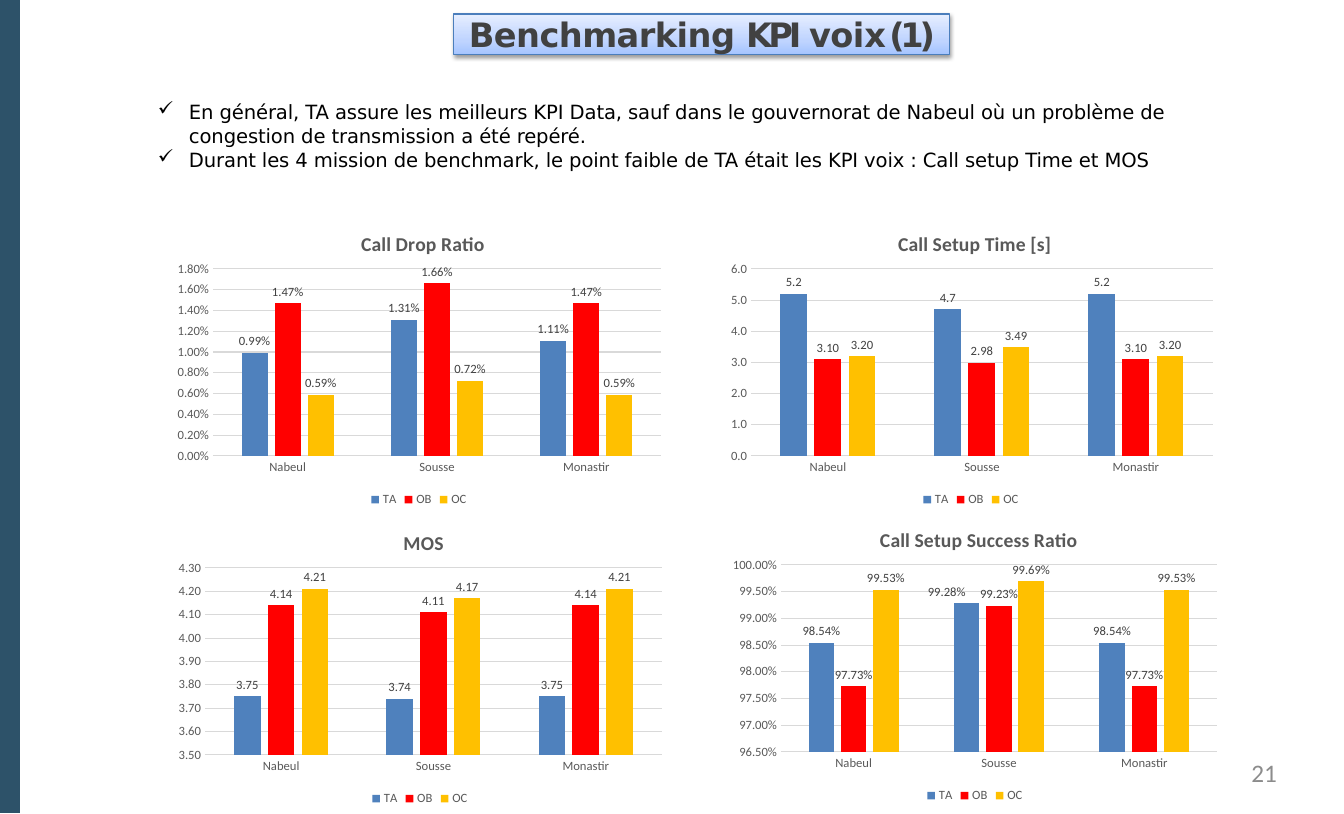
from pptx import Presentation
from pptx.chart.data import CategoryChartData
from pptx.dml.color import RGBColor
from pptx.enum.chart import XL_CHART_TYPE as ChartType, XL_LABEL_POSITION as LabelPos
from pptx.enum.chart import XL_LEGEND_POSITION as LegendPos, XL_TICK_MARK as Tick
from pptx.enum.shapes import MSO_SHAPE as Shape
from pptx.enum.text import MSO_ANCHOR as Anchor, PP_ALIGN as Align
from pptx.oxml import parse_xml
from pptx.oxml.ns import nsdecls, qn
from pptx.util import Pt

THEME = {
    "text_font": "DejaVu Sans", "chart_font": "Calibri",
    "bar": "2D5269", "title": "414141", "title_line": "4B7EBC",
    "title_stops": ((0, "A4C4FF"), (35, "BFD4FF"), (100, "E6EEFF")),
    "body": "000000", "page": "8C8C8C", "axis": "595959", "label": "404040",
    "grid": "D9D9D9", "operators": {"TA": "4F81BD", "OB": "FF0000", "OC": "FFC000"},
    "title_pt": 24, "body_pt": 14, "page_pt": 18, "chart_title_pt": 14, "axis_pt": 9,
}
CHART_W, CHART_H = 504, 302


def px(*lengths):
    return [round(n * 914400 / 100.8) for n in lengths]


def write(paragraph, text, font="text_font", color="body", size="body_pt",
          bold=False, align=None, spacing=None):
    run = paragraph.add_run()
    run.text = text
    run.font.name = THEME[font]
    run.font.size = Pt(THEME[size])
    run.font.bold = bold
    run.font.color.rgb = RGBColor.from_string(THEME[color])
    if align is not None:
        paragraph.alignment = align
    if spacing is not None:
        run.font._element.set("spc", str(round(spacing * 100)))


deck = Presentation()
deck.slide_width, deck.slide_height = px(1344, 814)
slide = deck.slides.add_slide(deck.slide_layouts[6])

# Side bar
side_bar = slide.shapes.add_shape(Shape.RECTANGLE, *px(0, 0, 20, 813))
side_bar.shadow.inherit = False
side_bar.fill.solid()
side_bar.fill.fore_color.rgb = RGBColor.from_string(THEME["bar"])
side_bar.line.fill.background()

# Title with gradient and soft shadow
heading = slide.shapes.add_shape(Shape.RECTANGLE, *px(454, 14, 496, 41))
heading.shadow.inherit = False
heading.line.color.rgb = RGBColor.from_string(THEME["title_line"])
heading.line.width = Pt(0.75)
stops = "".join(f'<a:gs pos="{pos * 1000}"><a:srgbClr val="{color}"/></a:gs>'
                for pos, color in THEME["title_stops"])
heading_props = heading._element.spPr
heading_props.find(qn("a:prstGeom")).addnext(parse_xml(
    f'<a:gradFill {nsdecls("a")} rotWithShape="1"><a:gsLst>{stops}</a:gsLst>'
    '<a:lin ang="16200000" scaled="0"/></a:gradFill>'))
heading_props.find(qn("a:effectLst")).append(parse_xml(
    f'<a:outerShdw {nsdecls("a")} blurRad="{Pt(3.1)}" dist="{Pt(1.6)}" dir="5400000" '
    'rotWithShape="0"><a:srgbClr val="000000"><a:alpha val="38000"/></a:srgbClr></a:outerShdw>'))
heading_text = heading.text_frame
heading_text.word_wrap = False
heading_text.vertical_anchor = Anchor.MIDDLE
heading_text.margin_left = heading_text.margin_right = 0
heading_text.margin_top = heading_text.margin_bottom = 0
for part, spacing in (("Benchmarking ", -0.4), ("KPI ", -2.8), ("voi", -0.5), ("x (1)", -3)):
    write(heading_text.paragraphs[0], part, color="title", size="title_pt",
          bold=True, align=Align.CENTER, spacing=spacing)

# Findings
findings = slide.shapes.add_textbox(*px(146, 95, 1084, 115)).text_frame
findings.word_wrap = True
indent, hanging = px(33, -31)
for number, finding in enumerate((
        "En général, TA assure les meilleurs KPI Data, sauf dans le gouvernorat de Nabeul "
        "où un problème de congestion de transmission a été repéré.",
        "Durant les 4 mission de benchmark, le point faible de TA était les KPI voix : "
        "Call setup Time et MOS")):
    paragraph = findings.add_paragraph() if number else findings.paragraphs[0]
    if number:
        paragraph.space_before = Pt(0.9)
    bullet = paragraph._p.get_or_add_pPr()
    bullet.set("marL", str(indent))
    bullet.set("indent", str(hanging))
    bullet.append(parse_xml(f'<a:buChar {nsdecls("a")} char="✓"/>'))
    write(paragraph, finding, spacing=-0.1)

# Charts: title, title width, left, top, plot inset, axis (min, max, step), formats, values
PERCENT, DECIMAL = "0.00%", "#,##0.00"
charts = (
    ("Call Drop Ratio", 123, 167, 209, 46, (0, 0.018, 0.002), PERCENT, PERCENT,
     ((0.0099, 0.0131, 0.0111), (0.0147, 0.0166, 0.0147), (0.0059, 0.0072, 0.0059))),
    ("MOS", 40, 168, 508, 37, (3.5, 4.3, 0.1), DECIMAL, DECIMAL,
     ((3.75, 3.74, 3.75), (4.14, 4.11, 4.14), (4.21, 4.17, 4.21))),
    ("Call Setup Time [s]", 153, 719, 209, 32, (0, 6, 1), "0.0", DECIMAL,
     ((5.2, 4.7, 5.2), (3.1, 2.98, 3.1), (3.2, 3.49, 3.2))),
    ("Call Setup Success Ratio", 197, 723, 505, 58, (0.965, 1, 0.005), PERCENT, PERCENT,
     ((0.9854, 0.9928, 0.9854), (0.9773, 0.9923, 0.9773), (0.9953, 0.9969, 0.9953))),
)
for (name, name_width, left, top, inset, (low, high, step),
     main_format, rival_format, values) in charts:
    formats = (main_format, rival_format, rival_format)
    data = CategoryChartData()
    data.categories = ("Nabeul", "Sousse", "Monastir")
    for operator, ratios, number_format in zip(THEME["operators"], values, formats):
        data.add_series(operator, ratios, number_format)
    chart = slide.shapes.add_chart(ChartType.COLUMN_CLUSTERED,
                                   *px(left, top, CHART_W, CHART_H), data).chart
    chart.font.name = THEME["chart_font"]
    chart.font.size = Pt(THEME["axis_pt"])
    chart.font.color.rgb = RGBColor.from_string(THEME["axis"])
    write(chart.chart_title.text_frame.paragraphs[0], name, font="chart_font",
          color="axis", size="chart_title_pt", bold=True)
    chart.has_legend = True
    chart.legend.position = LegendPos.BOTTOM
    chart.legend.include_in_layout = False

    # Axes
    cities, scale = chart.category_axis, chart.value_axis
    cities.major_tick_mark = scale.major_tick_mark = Tick.NONE
    scale.minimum_scale, scale.maximum_scale, scale.major_unit = low, high, step
    scale.tick_labels.number_format = main_format
    scale.tick_labels.number_format_is_linked = False
    scale.format.line.fill.background()
    for rule in (cities.format.line, scale.major_gridlines.format.line):
        rule.color.rgb = RGBColor.from_string(THEME["grid"])
        rule.width = Pt(0.75)

    # Columns and their labels
    plot = chart.plots[0]
    plot.gap_width, plot.overlap, plot.vary_by_categories = 219, -27, False
    for series, color, number_format in zip(plot.series, THEME["operators"].values(), formats):
        series.format.fill.solid()
        series.format.fill.fore_color.rgb = RGBColor.from_string(color)
        labels = series.data_labels
        labels.show_value = True
        labels.position = LabelPos.OUTSIDE_END
        labels.number_format = number_format
        labels.number_format_is_linked = False
        labels.font.size = Pt(THEME["axis_pt"])
        labels.font.color.rgb = RGBColor.from_string(THEME["label"])

    # Places inside the chart: parent, child index, target, mode, box in px
    title_xml = chart.chart_title._element
    places = [
        (title_xml, 1, "", "edge", {"x": (CHART_W - name_width) / 2, "y": 18}),
        (chart._chartSpace.chart.plotArea, 0, '<c:layoutTarget val="inner"/>', "edge",
         {"x": inset, "y": 60, "w": 494 - inset, "h": 187}),
    ]
    if name == "Call Setup Success Ratio":
        crowded = plot.series[0].points[1].data_label
        crowded.font.size = Pt(THEME["axis_pt"])
        crowded.font.color.rgb = RGBColor.from_string(THEME["label"])
        crowded.position = LabelPos.OUTSIDE_END
        crowded_xml = plot.series[0].data_labels._element.find(qn("c:dLbl"))
        places.append((crowded_xml, 1, "", "factor", {"x": -20, "y": 0}))
    for parent, index, target, mode, box in places:
        for former in parent.findall(qn("c:layout")):
            parent.remove(former)
        modes = "".join(f'<c:{axis}Mode val="{mode}"/>' for axis in "xy")
        sizes = "".join(f'<c:{key} val="{length / (CHART_W if key in "xw" else CHART_H):.4f}"/>'
                        for key, length in box.items())
        parent.insert(index, parse_xml(
            f'<c:layout {nsdecls("c")}><c:manualLayout>{target}{modes}{sizes}'
            '</c:manualLayout></c:layout>'))

# Page number
page = slide.shapes.add_textbox(*px(968, 757, 309, 40)).text_frame
page.word_wrap = True
page.margin_left = page.margin_right = page.margin_top = page.margin_bottom = 0
write(page.paragraphs[0], "21", font="chart_font", color="page", size="page_pt",
      align=Align.RIGHT)

deck.save("out.pptx")
